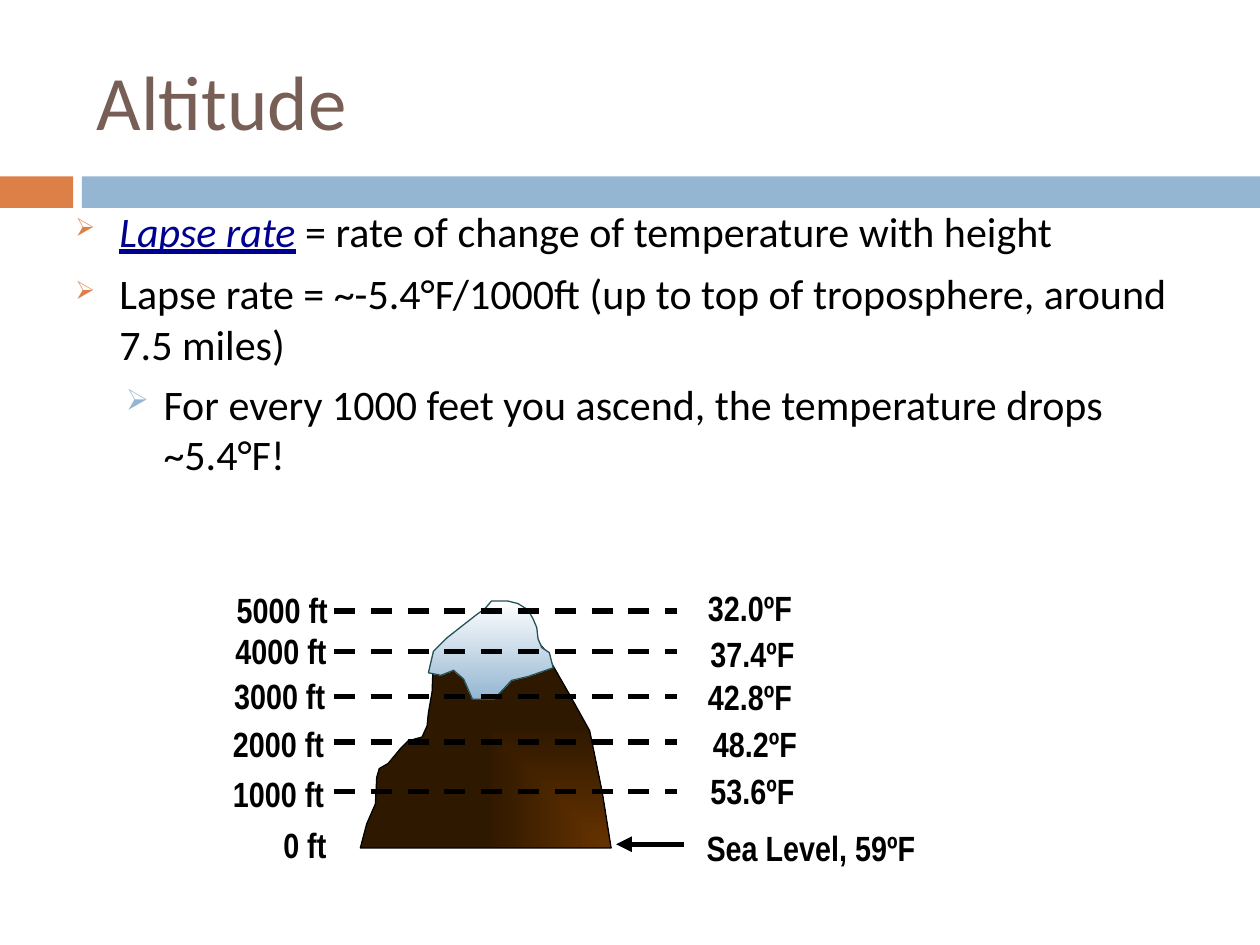
from lxml import etree
from pptx import Presentation
from pptx.dml.color import RGBColor
from pptx.enum.dml import MSO_LINE_DASH_STYLE as Dash
from pptx.enum.shapes import MSO_CONNECTOR as Connector, MSO_SHAPE as Shape
from pptx.enum.text import MSO_ANCHOR as Anchor
from pptx.oxml.ns import qn
from pptx.util import Inches, Pt

COLORS = {
    "orange": "DD8047", "blue": "94B6D2", "title": "775F55", "term": "000090",
    "black": "000000", "white": "FFFFFF", "brown": "663300",
    "dark brown": "2F1800", "snow line": "245256",
}


def add_text(left, top, width, height, text, size, font, color, wrap=True):
    box = slide.shapes.add_textbox(Inches(left), Inches(top), Inches(width), Inches(height))
    frame = box.text_frame
    frame.word_wrap = wrap
    frame.vertical_anchor = Anchor.MIDDLE
    frame.text = text
    for paragraph in frame.paragraphs:
        paragraph.font.size = Pt(size)
        paragraph.font.name = font
        paragraph.font.color.rgb = RGBColor.from_string(COLORS[color])
    return frame


def add_line(x1, x2, y):
    line = slide.shapes.add_connector(
        Connector.STRAIGHT, Inches(x1), Inches(y), Inches(x2), Inches(y))
    line.line.width = Pt(3)
    line.line.color.rgb = RGBColor.from_string(COLORS["black"])
    etree.SubElement(line._element.spPr, qn("a:effectLst"))
    return line.line


presentation = Presentation()
presentation.slide_width = Inches(10)
presentation.slide_height = Inches(7.5)
slide = presentation.slides.add_slide(presentation.slide_layouts[6])

for left, width, color in [(0, 0.58, "orange"), (0.65, 9.35, "blue")]:
    bar = slide.shapes.add_shape(
        Shape.RECTANGLE, Inches(left), Inches(1.4), Inches(width), Inches(0.25))
    bar.shadow.inherit = False
    bar.fill.solid()
    bar.fill.fore_color.rgb = RGBColor.from_string(COLORS[color])
    bar.line.fill.background()

add_text(0.67, 0.25, 8.92, 1.08, "Altitude", 44, "Calibri", "title")

body = add_text(
    0.5, 1.58, 9, 5.25,
    "\n".join([
        "",
        "Lapse rate = ~-5.4°F/1000ft (up to top of troposphere, around 7.5 miles)",
        "For every 1000 feet you ascend, the temperature drops ~5.4°F!",
    ]), 24, "Calibri", "black")
body.vertical_anchor = Anchor.TOP
term = body.paragraphs[0].add_run()
term.text = "Lapse rate"
term.font.italic = True
term.font.underline = True
term.font.color.rgb = RGBColor.from_string(COLORS["term"])
body.paragraphs[0].add_run().text = " = rate of change of temperature with height"

bullet_styles = [
    (0, 0.35, 0.35, 7, "orange", 60),
    (0, 0.35, 0.35, 7, "orange", 60),
    (1, 0.7, 0.3, 5.5, "blue", 70),
]
for paragraph, (level, margin, hanging, before, color, percent) in zip(
        body.paragraphs, bullet_styles):
    paragraph.level = level
    paragraph.space_before = Pt(before)
    properties = paragraph._p.get_or_add_pPr()
    properties.set("marL", str(Inches(margin)))
    properties.set("indent", str(-Inches(hanging)))
    bullet_color = etree.Element(qn("a:buClr"))
    etree.SubElement(bullet_color, qn("a:srgbClr"), val=COLORS[color])
    bullet_size = etree.Element(qn("a:buSzPct"), val=str(percent * 1000))
    bullet = etree.Element(qn("a:buChar"), char="➢")
    defaults = properties.find(qn("a:defRPr"))
    for element in (bullet_color, bullet_size, bullet):
        defaults.addprevious(element)
    for run in paragraph.runs:
        run.font.size = Pt(24)
        run.font.name = "Calibri"
        if run.text != term.text:
            run.font.color.rgb = RGBColor.from_string(COLORS["black"])

mountain_points = [
    (394, 479), (406, 481), (413, 483), (418, 490), (424, 496), (426, 508),
    (430, 513), (435, 519), (437, 525), (453, 553), (468, 580), (478, 629),
    (485, 673), (286, 673), (291, 654), (298, 638), (299, 617), (301, 610),
    (308, 606), (318, 594), (324, 588), (335, 585), (339, 576), (340, 566),
    (343, 549), (344, 521), (361, 504), (378, 491), (386, 482),
]
snow_points = [
    (403, 477), (411, 479), (419, 484), (423, 491), (426, 498), (427, 507),
    (430, 514), (436, 518), (439, 530), (419, 537), (406, 540), (392, 555),
    (375, 555), (368, 539), (360, 532), (350, 536), (340, 534), (344, 517),
    (355, 506), (378, 488), (385, 483), (390, 477),
]
for points, colors, outline in [
    (mountain_points, ("brown", "dark brown"), "black"),
    (snow_points, ("white", "blue"), "snow line"),
]:
    builder = slide.shapes.build_freeform(*points[0], scale=Inches(0.01))
    builder.add_line_segments(points[1:], close=True)
    shape = builder.convert_to_shape()
    shape.shadow.inherit = False
    shape.line.width = Pt(0.75)
    shape.line.color.rgb = RGBColor.from_string(COLORS[outline])
    shape.fill.gradient()
    shape.fill.gradient_angle = 270
    for stop, color in zip(shape.fill.gradient_stops, colors):
        stop.color.rgb = RGBColor.from_string(COLORS[color])
    if points is mountain_points:
        gradient = shape._element.spPr.find(qn("a:gradFill"))
        linear = gradient.find(qn("a:lin"))
        corner = etree.Element(qn("a:path"), path="rect")
        etree.SubElement(corner, qn("a:fillToRect"), l="100000", t="100000")
        gradient.replace(linear, corner)

arrow = add_line(5.43, 4.89, 6.7)
etree.SubElement(arrow._get_or_add_ln(), qn("a:tailEnd"), type="triangle")
for y in (6.28, 5.89, 5.53, 5.17, 4.85):
    add_line(2.65, 5.37, y).dash_style = Dash.DASH

labels = [
    (1.78, 4.62, 0.93, "5000 ft"), (1.77, 4.94, 0.93, "4000 ft"),
    (1.76, 5.3, 0.93, "3000 ft"), (1.75, 5.68, 0.93, "2000 ft"),
    (1.75, 6.08, 0.93, "1000 ft"), (2.15, 6.48, 0.6, "0 ft"),
    (5.52, 4.6, 0.87, "32.0ºF"), (5.54, 4.97, 0.87, "37.4ºF"),
    (5.52, 5.31, 0.87, "42.8ºF"), (5.56, 5.68, 0.87, "48.2ºF"),
    (5.54, 6.05, 0.87, "53.6ºF"), (5.51, 6.51, 2.57, "Sea Level, 59ºF"),
]
for left, top, width, text in labels:
    label = add_text(left, top, width, 0.44, text, 20, "Arial Narrow", "black", wrap=False)
    font = label.paragraphs[0].runs[0].font
    font.size = Pt(20)
    font.name = "Arial Narrow"
    font.bold = True

presentation.save("out.pptx")
